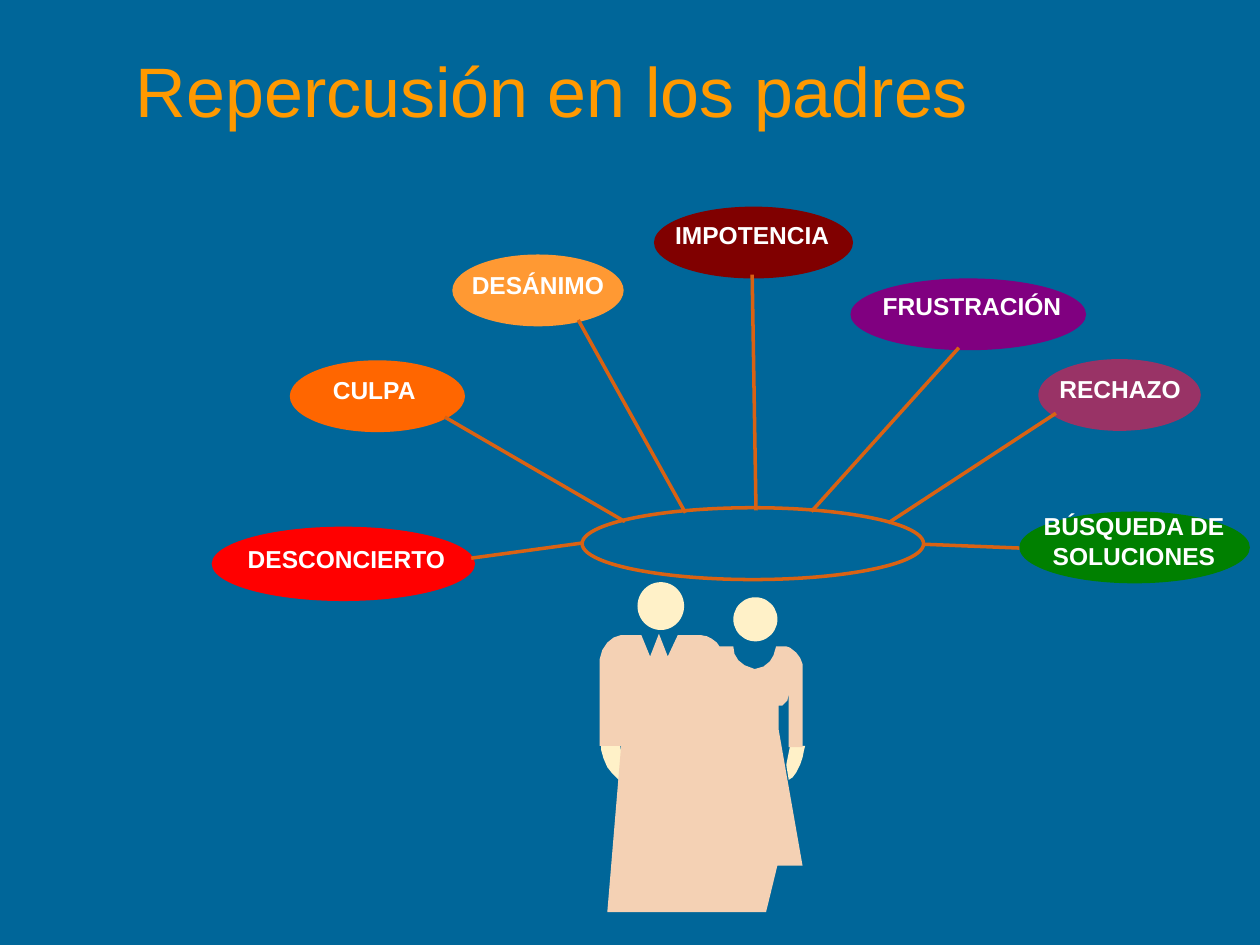
from pptx import Presentation
from pptx.dml.color import RGBColor
from pptx.enum import shapes, text
from pptx.oxml import ns
from pptx.util import Inches, Pt
from lxml import etree

COLORS = {
    "background": "006699", "title": "FF9900", "label": "FFFFFF",
    "ray": "D96213", "skin": "FFF1C8", "clothes": "F4D1B4",
}

# Feeling, fill, ellipse box, label box, ray from the feeling to the hub
FEELINGS = [
    ("DESCONCIERTO", "FF0000", (1.68, 4.18, 2.09, 0.59), (1.77, 4.27, 1.96, 0.34), (3.74, 4.43, 4.62, 4.31)),
    ("CULPA", "FF6600", (2.3, 2.86, 1.39, 0.57), (2.29, 2.93, 1.36, 0.34), (3.53, 3.31, 4.96, 4.14)),
    ("DESÁNIMO", "FF9933", (3.59, 2.02, 1.36, 0.57), (3.61, 2.09, 1.32, 0.34), (4.59, 2.54, 5.44, 4.07)),
    ("IMPOTENCIA", "800000", (5.19, 1.64, 1.58, 0.57), (5.19, 1.7, 1.56, 0.34), (5.97, 2.18, 6, 4.05)),
    ("FRUSTRACIÓN", "800080", (6.75, 2.21, 1.87, 0.57), (6.66, 2.26, 2.11, 0.34), (7.61, 2.76, 6.44, 4.06)),
    ("RECHAZO", "993366", (8.24, 2.85, 1.29, 0.57), (8.21, 2.92, 1.36, 0.34), (8.38, 3.28, 7.05, 4.15)),
    ("BÚSQUEDA DE SOLUCIONES", "008000", (8.09, 4.06, 1.83, 0.57), (8.13, 4.01, 1.74, 0.57), (8.09, 4.35, 7.34, 4.32)),
]
HUB = (4.62, 4.03, 2.71, 0.57)

HEADS = [(5.06, 4.62, 0.37, 0.38), (5.82, 4.74, 0.35, 0.35)]
HANDS = [
    [(4.77, 5.9), (4.92, 5.9), (4.96, 6.2), (4.91, 6.19), (4.86, 6.14), (4.82, 6.09),
     (4.79, 6.02), (4.77, 5.95)],
    [(6.39, 5.92), (6.27, 5.92), (6.24, 6.07), (6.26, 6.19), (6.29, 6.17), (6.32, 6.13),
     (6.35, 6.07), (6.37, 6.01), (6.38, 5.96)],
]
BODIES = [
    # His shoulders, collar and left side
    (5.71, 5.13), (5.69, 5.1), (5.65, 5.07), (5.61, 5.05), (5.56, 5.04), (5.38, 5.04),
    (5.3, 5.21), (5.23, 5.03), (5.16, 5.21), (5.09, 5.04), (4.93, 5.04), (4.87, 5.06),
    (4.82, 5.1), (4.78, 5.16), (4.76, 5.23), (4.76, 5.92), (4.93, 5.92),
    # Hems and skirt
    (4.82, 7.24), (6.08, 7.24), (6.17, 6.87), (6.37, 6.87), (6.18, 5.79),
    # Her arm, shoulder and neckline
    (6.18, 5.6), (6.21, 5.6), (6.25, 5.56), (6.26, 5.5), (6.26, 5.93), (6.37, 5.93),
    (6.37, 5.27), (6.35, 5.22), (6.32, 5.18), (6.27, 5.14), (6.24, 5.13), (6.16, 5.13),
    (6.14, 5.2), (6.11, 5.25), (6.06, 5.29), (5.99, 5.31), (5.91, 5.28), (5.86, 5.24),
    (5.83, 5.19), (5.82, 5.13),
]


def rgb(color):
    return RGBColor.from_string(color)


def paint(shape, color):
    shape.shadow.inherit = False
    shape.fill.solid()
    shape.fill.fore_color.rgb = rgb(color)
    shape.line.fill.background()


def draw_stroke(line):
    line.color.rgb = rgb(COLORS["ray"])
    line.width = Pt(2)


def add_ellipse(parent, box):
    return parent.add_shape(shapes.MSO_SHAPE.OVAL, *map(Inches, box))


def add_text(slide, words, box, size, color, bold=False, align=None,
             anchor=text.MSO_ANCHOR.TOP):
    frame = slide.shapes.add_textbox(*map(Inches, box)).text_frame
    frame.word_wrap = True
    frame.vertical_anchor = anchor
    frame.text = words
    paragraph = frame.paragraphs[0]
    paragraph.alignment = align
    font = paragraph.runs[0].font
    font.name, font.size, font.bold = "Arial", Pt(size), bold
    font.color.rgb = rgb(color)


def add_ray(slide, ends):
    ray = slide.shapes.add_connector(shapes.MSO_CONNECTOR.STRAIGHT, *map(Inches, ends))
    draw_stroke(ray.line)
    etree.SubElement(ray._element.spPr, ns.qn("a:effectLst"))


def add_outline(parent, points, color):
    # Freeform vertices are whole numbers, so lengths go in as EMU
    start, *rest = [(Inches(x), Inches(y)) for x, y in points]
    builder = parent.build_freeform(*start)
    builder.add_line_segments(rest, close=True)
    paint(builder.convert_to_shape(), color)


def add_couple(slide):
    couple = slide.shapes.add_group_shape().shapes
    for head in HEADS:
        paint(add_ellipse(couple, head), COLORS["skin"])
    for hand in HANDS:
        add_outline(couple, hand, COLORS["skin"])
    add_outline(couple, BODIES, COLORS["clothes"])


def main():
    deck = Presentation()
    deck.slide_width, deck.slide_height = Inches(10), Inches(7.5)
    slide = deck.slides.add_slide(deck.slide_layouts[6])
    slide.background.fill.solid()
    slide.background.fill.fore_color.rgb = rgb(COLORS["background"])

    # Title
    add_text(slide, "Repercusión en los padres", (0.98, 0.23, 8.76, 0.96), 40,
             COLORS["title"], anchor=text.MSO_ANCHOR.MIDDLE)

    # Hub and the feelings around it
    hub = add_ellipse(slide.shapes, HUB)
    hub.shadow.inherit = False
    hub.fill.background()
    draw_stroke(hub.line)
    for feeling, fill, ellipse_box, label_box, ray_ends in FEELINGS:
        paint(add_ellipse(slide.shapes, ellipse_box), fill)
        add_text(slide, feeling, label_box, 14, COLORS["label"], bold=True,
                 align=text.PP_ALIGN.CENTER)
        add_ray(slide, ray_ends)

    # Parents
    add_couple(slide)
    deck.save("out.pptx")


if __name__ == "__main__":
    main()
